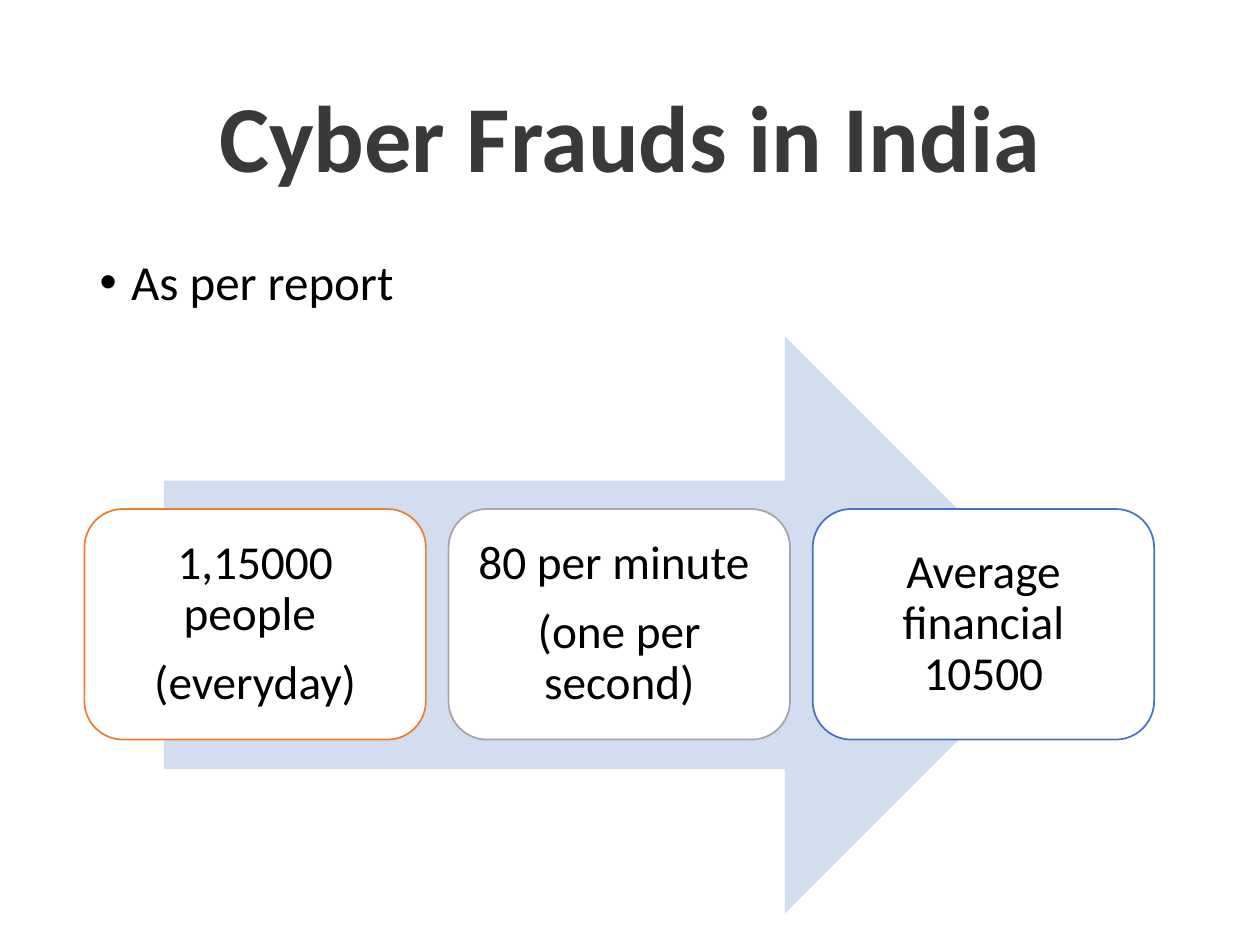
from pptx import Presentation
from pptx.dml.color import RGBColor
from pptx.enum.shapes import MSO_SHAPE as Shape
from pptx.enum.text import MSO_ANCHOR as Anchor, MSO_AUTO_SIZE as AutoSize, PP_ALIGN as Align
from pptx.util import Inches, Pt

TITLE_GRAY = RGBColor(0x3B, 0x38, 0x38)
BLACK = RGBColor(0, 0, 0)
WHITE = RGBColor(0xFF, 0xFF, 0xFF)
PALE_BLUE = RGBColor(0xD2, 0xDE, 0xEF)
ORANGE = RGBColor(0xED, 0x7D, 0x31)
GRAY = RGBColor(0xA5, 0xA5, 0xA5)
BLUE = RGBColor(0x44, 0x72, 0xC4)

FACTS = [
    (ORANGE, ["1,15000 people ", "(everyday)"]),
    (GRAY, ["80 per minute ", "(one per second)"]),
    (BLUE, ["Average financial 10500"]),
]
FACT_LEFT, FACT_STEP = 0.67, 2.89


def place(shape, left, top, width, height):
    shape.left, shape.top = Inches(left), Inches(top)
    shape.width, shape.height = Inches(width), Inches(height)


def write(frame, lines, size, color, align, before=0, after=0, bold=False):
    frame.text = "\n".join(lines)
    frame.word_wrap = True
    frame.auto_size = AutoSize.NONE
    for para in frame.paragraphs:
        para.alignment = align
        para.line_spacing = 0.9
        para.space_before, para.space_after = Pt(before), Pt(after)
        font = para.font
        font.name, font.size, font.bold = "Calibri", Pt(size), bold
        font.color.rgb = color


def add_title(slide):
    title = slide.shapes.title
    place(title, 0.69, 0.4, 8.62, 1.45)
    title.text_frame.vertical_anchor = Anchor.MIDDLE
    write(title.text_frame, ["Cyber Frauds in India"], 54, TITLE_GRAY, Align.CENTER, bold=True)


def add_bullet(slide):
    body = slide.placeholders[1]
    place(body, 0.69, 2, 8.62, 4.76)
    write(body.text_frame, ["As per report"], 28, BLACK, Align.LEFT, before=10)
    properties = body.text_frame.paragraphs[0]._p.get_or_add_pPr()
    properties.set("marL", str(Inches(0.25)))
    properties.set("indent", str(Inches(-0.25)))


def add_filled_shape(slide, kind, left, top, width, height, fill):
    shape = slide.shapes.add_shape(
        kind, Inches(left), Inches(top), Inches(width), Inches(height))
    shape.shadow.inherit = False
    shape.fill.solid()
    shape.fill.fore_color.rgb = fill
    return shape


def add_arrow(slide):
    arrow = add_filled_shape(slide, Shape.RIGHT_ARROW, 1.3, 2.67, 7.22, 4.58, PALE_BLUE)
    arrow.line.fill.background()


def add_fact(slide, left, outline, lines):
    box = add_filled_shape(slide, Shape.ROUNDED_RECTANGLE, left, 4.04, 2.71, 1.83, WHITE)
    box.line.color.rgb = outline
    box.line.width = Pt(1)
    frame = box.text_frame
    # The preset's rounded corners already inset the text by about 0.09 inches.
    frame.margin_left = frame.margin_right = Inches(0.12)
    frame.margin_top = frame.margin_bottom = Inches(0.11)
    frame.vertical_anchor = Anchor.MIDDLE
    write(frame, lines, 27, BLACK, Align.CENTER, after=10)


def main():
    deck = Presentation()
    deck.slide_width, deck.slide_height = Inches(10), Inches(7.5)
    slide = deck.slides.add_slide(deck.slide_layouts[1])
    add_title(slide)
    add_bullet(slide)
    add_arrow(slide)
    for index, (outline, lines) in enumerate(FACTS):
        add_fact(slide, FACT_LEFT + index * FACT_STEP, outline, lines)
    deck.save("out.pptx")


if __name__ == "__main__":
    main()
